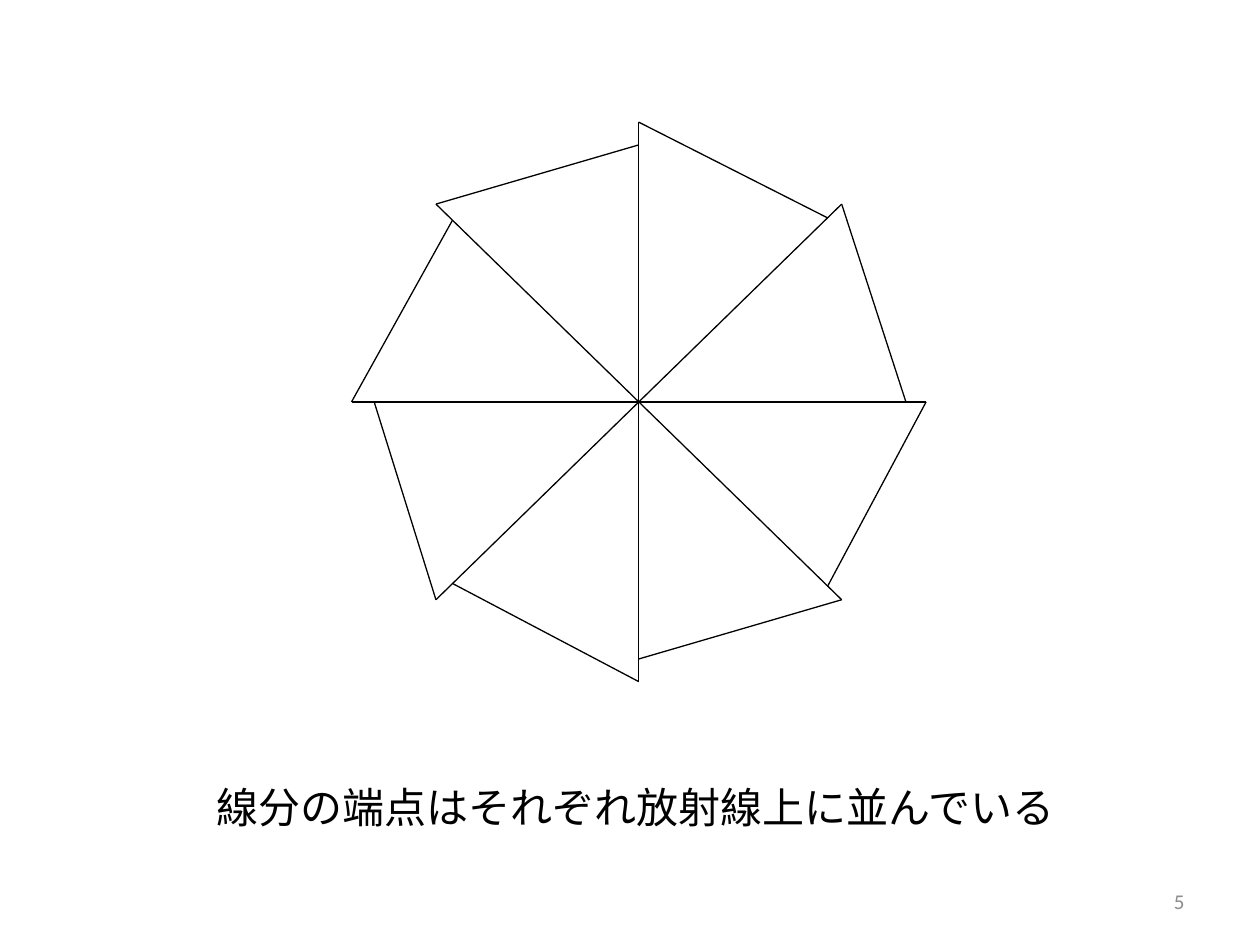
import math
from lxml import etree
from pptx import Presentation
from pptx import util as u
from pptx.dml.color import RGBColor
from pptx.enum import shapes, text
from pptx.oxml.ns import qn

COLORS = {"ink": "000000", "number": "8C8C8C"}

# Content: left, top, width, height, then the text and its format
TEXTS = [
    ((1.62, 6.15, 6.9, 0.5), "線分の端点はそれぞれ放射線上に並んでいる",
     {"name": "Noto Sans CJK JP", "size": u.Pt(24)}, "ink",
     {"alignment": text.PP_ALIGN.LEFT}, text.MSO_ANCHOR.TOP, False),
    ((7.17, 6.95, 2.33, 0.4), "5",
     {"name": "Calibri", "size": u.Pt(12)}, "number",
     {"alignment": text.PP_ALIGN.RIGHT}, text.MSO_ANCHOR.MIDDLE, True),
]

# Wheel: eight spokes on an ellipse, clockwise from the upper left
CENTER = (5.07, 3.19)
RADII = (2.28, 2.22)
SPOKES = 8
START_ANGLE = 225
# How far along the next spoke each rim segment ends
RIM_ENDS = [0.92, 0.93, 0.93, 0.93, 0.92, 0.92, 0.92, 0.92]


def set_all(obj, values):
    for name, value in values.items():
        setattr(obj, name, value)


def spoke_point(i, fraction=1):
    a = math.radians(START_ANGLE + i * 360 / SPOKES)
    return (CENTER[0] + RADII[0] * fraction * math.cos(a),
            CENTER[1] + RADII[1] * fraction * math.sin(a))


def add_line(parent, start, end):
    ends = [u.Inches(round(v, 2)) for v in (*start, *end)]
    c = parent.add_connector(shapes.MSO_CONNECTOR.STRAIGHT, *ends)
    c.line.width = u.Pt(0.75)
    c.line.color.rgb = RGBColor.from_string(COLORS["ink"])
    etree.SubElement(c._element.spPr, qn("a:effectLst"))


def add_text(s, box, words, font, color, para, anchor, wrap):
    tf = s.shapes.add_textbox(*map(u.Inches, box)).text_frame
    set_all(tf, {"word_wrap": wrap, "vertical_anchor": anchor})
    p = tf.paragraphs[0]
    set_all(p, para)
    r = p.add_run()
    r.text = words
    set_all(r.font, font)
    r.font.color.rgb = RGBColor.from_string(COLORS[color])
    etree.SubElement(r._r.get_or_add_rPr(), qn("a:ea"), typeface=font["name"])


def main():
    prs = Presentation()
    set_all(prs, {"slide_width": u.Inches(10), "slide_height": u.Inches(7.5)})
    s = prs.slides.add_slide(prs.slide_layouts[6])

    # Caption and slide number
    for item in TEXTS:
        add_text(s, *item)

    # Radial lines, grouped
    radials = s.shapes.add_group_shape().shapes
    for i in range(SPOKES // 2):
        add_line(radials, spoke_point(i), spoke_point(i + SPOKES // 2))

    # Rim segments, each from a spoke's tip to the next spoke
    for i, fraction in enumerate(RIM_ENDS):
        add_line(s.shapes, spoke_point(i), spoke_point(i + 1, fraction))

    prs.save("out.pptx")


if __name__ == "__main__":
    main()
